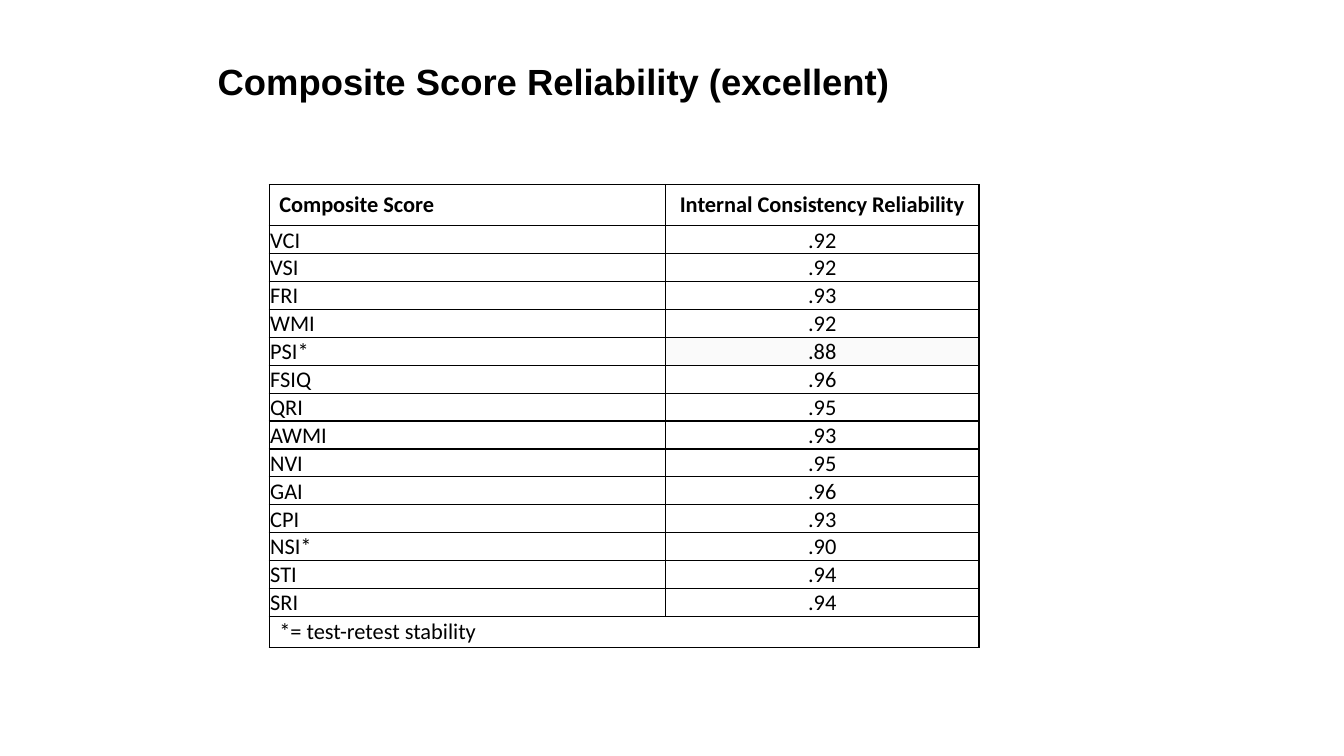
from lxml.etree import SubElement
from pptx import Presentation
from pptx.dml.color import RGBColor
from pptx.enum.text import MSO_ANCHOR as Anchor, PP_ALIGN as Align
from pptx.oxml.ns import qn
from pptx.util import Inches, Pt

BLACK = RGBColor(0x00, 0x00, 0x00)
WHITE = RGBColor(0xFF, 0xFF, 0xFF)
PALE_GRAY = RGBColor(0xFA, 0xFA, 0xFA)

HEADER = ("Composite Score", "Internal Consistency Reliability")
SCORES = [
    ("VCI", ".92"), ("VSI", ".92"), ("FRI", ".93"), ("WMI", ".92"),
    ("PSI*", ".88"), ("FSIQ", ".96"), ("QRI", ".95"), ("AWMI", ".93"),
    ("NVI", ".95"), ("GAI", ".96"), ("CPI", ".93"), ("NSI*", ".90"),
    ("STI", ".94"), ("SRI", ".94"),
]
FOOTNOTE = "*= test-retest stability"
FIRST_MIDDLE_ROW = 12
SIDES = ("left", "top", "right", "bottom")
WIDE_MARGINS = (0.1, 0.02, 0.1, 0.02)
TIGHT_MARGINS = (0.01, 0.01, 0.01, 0)


class ReliabilitySlide:
    title_font = {"name": "Arial", "size": Pt(26), "bold": True}
    header_font = {"name": "Calibri", "size": Pt(16), "bold": True}
    body_font = {"name": "Calibri", "size": Pt(16), "bold": False}

    def __init__(self, presentation):
        self.slide = presentation.slides.add_slide(presentation.slide_layouts[6])

    def add_text(self, frame, text, font, align=Align.LEFT):
        paragraph = frame.paragraphs[0]
        paragraph.alignment = align
        run = paragraph.add_run()
        run.text = text
        for name, value in font.items():
            setattr(run.font, name, value)
        run.font.color.rgb = BLACK

    def set_margins(self, target, margins):
        for side, margin in zip(SIDES, margins):
            setattr(target, f"margin_{side}", Inches(margin))

    def add_title(self, text, left, top, width, height):
        box = self.slide.shapes.add_textbox(
            Inches(left), Inches(top), Inches(width), Inches(height))
        frame = box.text_frame
        frame.word_wrap = True
        frame.vertical_anchor = Anchor.MIDDLE
        self.set_margins(frame, (0.1,) * 4)
        self.add_text(frame, text, self.title_font)

    def add_borders(self, cell):
        """Draw a thin black line on all four sides, ahead of the cell's fill."""
        properties = cell._tc.get_or_add_tcPr()
        for position, tag in enumerate(("a:lnL", "a:lnR", "a:lnT", "a:lnB")):
            line = SubElement(properties, qn(tag), w=str(Pt(1)))
            fill = SubElement(line, qn("a:solidFill"))
            SubElement(fill, qn("a:srgbClr"), val=str(BLACK))
            properties.insert(position, line)

    def fill_cell(self, cell, text, font, align, anchor, margins, color=WHITE):
        if text:
            self.add_text(cell.text_frame, text, font, align)
        self.set_margins(cell, margins)
        cell.vertical_anchor = anchor
        cell.fill.solid()
        cell.fill.fore_color.rgb = color
        self.add_borders(cell)

    def add_score_table(self, left, top, column_widths, row_heights, height):
        rows = [HEADER, *SCORES, (FOOTNOTE, "")]
        last = len(rows) - 1
        graphic = self.slide.shapes.add_table(
            len(rows), len(HEADER), Inches(left), Inches(top),
            Inches(sum(column_widths)), Inches(height))
        table = graphic.table
        table.first_row = table.horz_banding = False
        for column, width in zip(table.columns, column_widths):
            column.width = Inches(width)
        for row, row_height in zip(table.rows, row_heights):
            row.height = Inches(row_height)
        graphic.height = Inches(height)
        table.cell(last, 0).merge(table.cell(last, 1))

        for i, texts in enumerate(rows):
            is_score = 0 < i < last
            anchor = Anchor.BOTTOM if 0 < i < FIRST_MIDDLE_ROW else Anchor.MIDDLE
            for j, text in enumerate(texts):
                self.fill_cell(
                    table.cell(i, j), text,
                    self.header_font if i == 0 else self.body_font,
                    Align.CENTER if j else Align.LEFT, anchor,
                    TIGHT_MARGINS if is_score else WIDE_MARGINS,
                    PALE_GRAY if text == ".88" else WHITE)


def main():
    presentation = Presentation()
    presentation.slide_width = Inches(13.33)
    presentation.slide_height = Inches(7.5)
    page = ReliabilitySlide(presentation)
    page.add_title("Composite Score Reliability (excellent)", 2.06, 0.43, 9.15, 0.74)
    page.add_score_table(
        2.67, 1.83, (3.93, 3.11), [0.41] + [0.24] * len(SCORES) + [0.3], 4.59)
    presentation.save("out.pptx")


if __name__ == "__main__":
    main()
